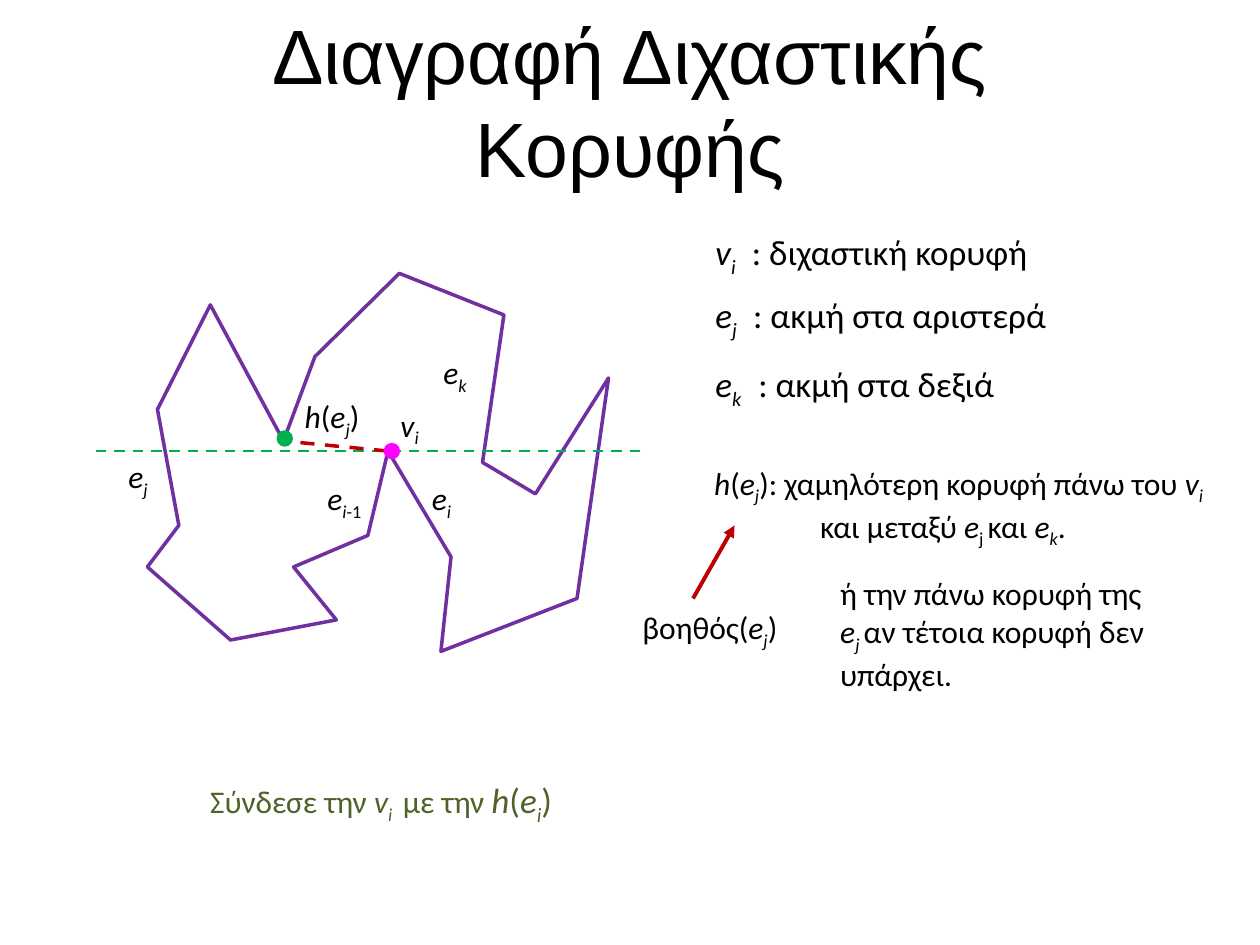
from pptx import Presentation
from pptx.dml.color import RGBColor
from pptx.enum.dml import MSO_LINE_DASH_STYLE as Dash
from pptx.enum.shapes import MSO_CONNECTOR as Conn, MSO_SHAPE as Shape
from pptx.enum.text import MSO_ANCHOR as Anchor, MSO_AUTO_SIZE as Fit, PP_ALIGN as Align
from pptx.oxml.ns import qn
from pptx.util import Inches, Pt
from lxml import etree

BLACK = RGBColor(0, 0, 0)
PURPLE = RGBColor(0x70, 0x30, 0xA0)
GREEN = RGBColor(0x00, 0xB0, 0x50)
RED = RGBColor(0xC0, 0, 0)
PINK = RGBColor(0xFF, 0, 0xFF)
OLIVE = RGBColor(0x4F, 0x62, 0x28)


def sub(name, mark):
    return [(name, "i"), (mark, "is")]


def helper(mark):
    return [("h", "i"), ("(", ""), *sub("e", mark), (")", "")]


def add_text(slide, box, paras, size=18, font="Calibri", color=BLACK, wrap=False,
             align=Align.LEFT, anchor=Anchor.TOP, fit=Fit.SHAPE_TO_FIT_TEXT,
             tab=None, indents=()):
    frame = slide.shapes.add_textbox(*map(Inches, box)).text_frame
    frame.word_wrap = wrap
    frame.auto_size = fit
    frame.vertical_anchor = anchor
    for num, runs in enumerate(paras):
        para = frame.add_paragraph() if num else frame.paragraphs[0]
        para.alignment = align
        props = para._p.get_or_add_pPr()
        if indents:
            props.set("marL", str(Inches(indents[num])))
            props.set("indent", "0")
        if tab:
            stops = etree.SubElement(props, qn("a:tabLst"))
            etree.SubElement(stops, qn("a:tab"), pos=str(Inches(tab)), algn="l")
        for words, style, *big in runs:
            run = para.add_run()
            run.text = words
            run.font.name = font
            run.font.size = Pt(big[0] if big else size)
            run.font.color.rgb = color
            run.font.italic = "i" in style
            if "s" in style:
                run._r.get_or_add_rPr().set("baseline", "-25000")


def add_line(slide, start, end, color, width, dash=None, arrow=False):
    line = slide.shapes.add_connector(Conn.STRAIGHT, *map(Inches, start + end))
    line.line.color.rgb = color
    line.line.width = Pt(width)
    if dash:
        line.line.dash_style = dash
    if arrow:
        etree.SubElement(line.line._get_or_add_ln(), qn("a:tailEnd"), type="triangle")
    etree.SubElement(line._element.spPr, qn("a:effectLst"))


def add_dot(slide, x, y, color, size=0.12):
    box = (x - size / 2, y - size / 2, size, size)
    dot = slide.shapes.add_shape(Shape.OVAL, *map(Inches, box))
    dot.shadow.inherit = False
    dot.fill.solid()
    dot.fill.fore_color.rgb = color
    dot.line.color.rgb = color
    dot.line.width = Pt(0.75)


def draw_polygon(slide, x, y):
    corners = [
        (1.58, 2.33), (1.92, 2.75), (1.08, 2.91), (0.42, 2.33), (0.67, 2),
        (0.5, 1.08), (0.92, 0.25), (1.5, 1.33), (1.75, 0.66), (2.42, 0),
        (3.25, 0.33), (3.08, 1.5), (3.5, 1.75), (4.08, 0.83), (3.83, 2.58),
        (2.75, 3), (2.83, 2.25), (2.33, 1.41), (2.17, 2.08),
    ]
    points = [(Inches(x + dx), Inches(y + dy)) for dx, dy in corners]
    build = slide.shapes.build_freeform(*points[0])
    build.add_line_segments(points[1:], close=True)
    poly = build.convert_to_shape()
    poly.shadow.inherit = False
    poly.fill.background()
    poly.line.color.rgb = PURPLE
    poly.line.width = Pt(2)

    sweep = y + 1.41
    add_line(slide, (x + 4.33, sweep), (x, sweep), GREEN, 1.5, Dash.DASH)
    add_line(slide, (x + 2.33, sweep), (x + 1.5, y + 1.33), RED, 2, Dash.DASH)
    add_dot(slide, x + 2.36, sweep, PINK)
    add_dot(slide, x + 1.51, y + 1.31, GREEN)

    labels = [
        (1.75, 1.58, 0.5, sub("e", "i") + [("-1", "s")]),
        (0.17, 1.41, 0.36, sub("e", "j")),
        (2.67, 0.58, 0.4, sub("e", "k")),
        (2.58, 1.58, 0.36, sub("e", "i")),
        (2.33, 1, 0.35, sub("v", "i")),
        (1.57, 0.93, 0.65, helper("j")),
    ]
    for dx, dy, width, runs in labels:
        add_text(slide, (x + dx, y + dy, width, 0.4), [runs])


def write_terms(slide, x, y):
    terms = [
        (0, 2.7, 0.29, sub("v", "i"), "διχαστική κορυφή"),
        (0.5, 2.96, 0.3, sub("e", "j"), "ακμή στα αριστερά"),
        (1.05, 2.5, 0.34, sub("e", "k"), "ακμή στα δεξιά"),
    ]
    for dy, width, tab, name, words in terms:
        add_text(slide, (x, y + dy, width, 0.44), [name + [("\t: " + words, "")]],
                 size=20, tab=tab)


def write_helper(slide, x, y):
    first = helper("j") + [(": χαμηλότερη κορυφή πάνω του ", "")] + sub("v", "i")
    second = [("και μεταξύ ", ""), ("e", "i"), ("j ", "s"), ("και ", ""),
              *sub("e", "k"), (".", "")]
    add_text(slide, (x + 0.57, y, 4.36, 0.71), [first, second], indents=(0, 0.84))
    other = [[("ή την πάνω κορυφή της", "")],
             sub("e", "j ") + [("αν τέτοια κορυφή δεν υπάρχει.", "")]]
    add_text(slide, (x + 1.57, y + 0.88, 3.18, 1.01), other, wrap=True)
    add_line(slide, (x + 0.5, y + 1.12), (x + 0.83, y + 0.54), RED, 2.25, arrow=True)
    add_text(slide, (x, y + 1.15, 1.33, 0.4),
             [[("βοηθός(", ""), *sub("e", "j"), (")", "")]])


def write_title(slide, box):
    add_text(slide, box, [[("Διαγραφή Διχαστικής Κορυφής", "")]], size=44, font="Arial",
             wrap=True, align=Align.CENTER, anchor=Anchor.MIDDLE, fit=Fit.NONE)


def write_step(slide, box):
    big = [(words, style, 20) for words, style in helper("i")]
    runs = [("Σύνδεσε την ", ""), *sub("v", "i"), ("\tμε την ", ""), *big]
    add_text(slide, box, [runs], color=OLIVE, tab=1.53)


def main():
    deck = Presentation()
    deck.slide_width, deck.slide_height = Inches(10), Inches(7.5)
    slide = deck.slides.add_slide(deck.slide_layouts[6])
    write_title(slide, (0.9, 0.17, 8.2, 1.25))
    draw_polygon(slide, 0.75, 2.17)
    write_terms(slide, 5.58, 1.78)
    write_helper(slide, 5, 3.63)
    write_step(slide, (1.57, 6.13, 3.03, 0.44))
    deck.save("out.pptx")


if __name__ == "__main__":
    main()
